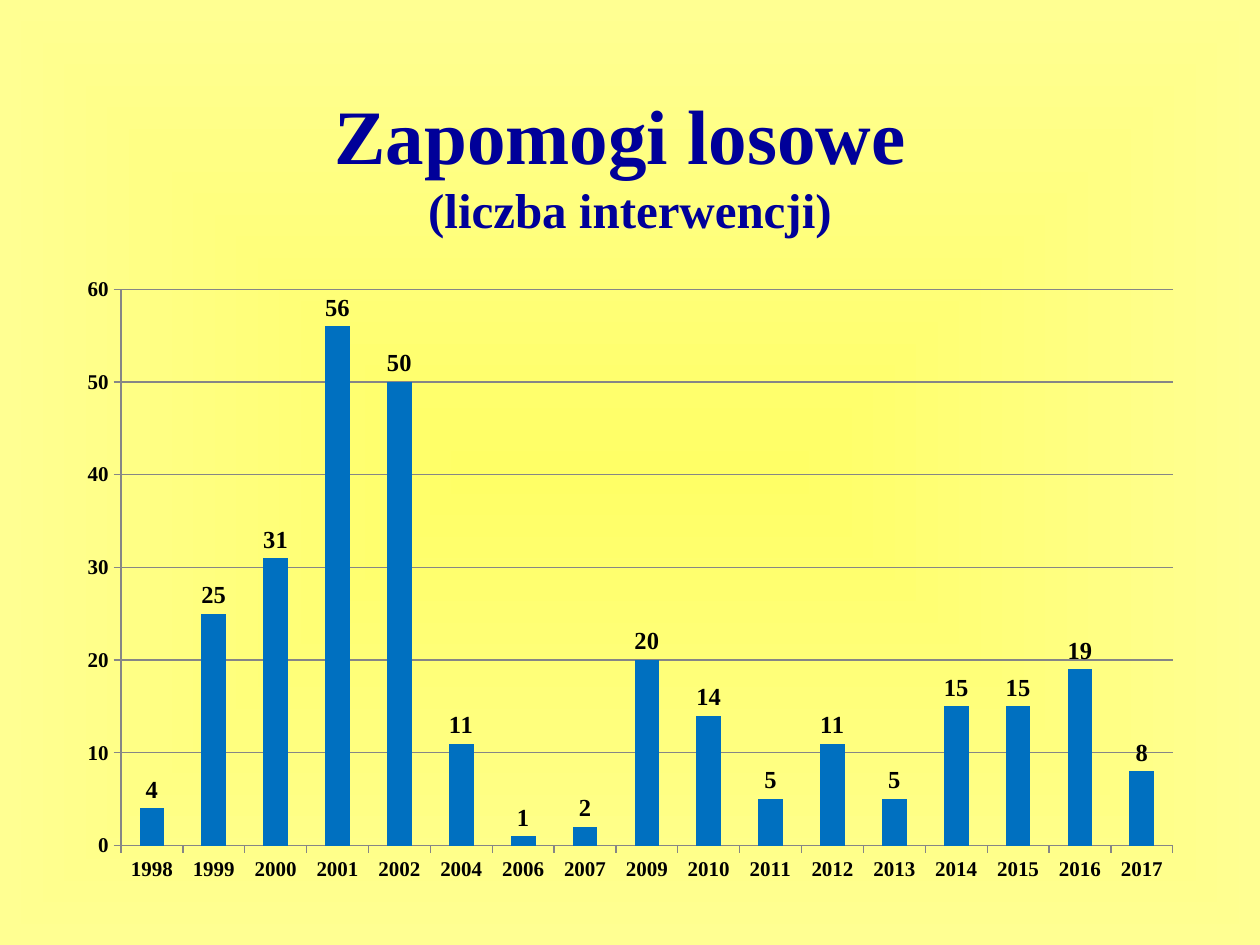
from dataclasses import dataclass

import pptx
import pptx.chart.data
import pptx.dml.color
import pptx.enum.chart
import pptx.enum.text
import pptx.oxml
import pptx.oxml.ns
import pptx.util
from pptx.util import Cm, Pt


def colour(code):
    return pptx.dml.color.RGBColor.from_string(code)


@dataclass(frozen=True)
class Theme:
    font: str = "Times New Roman"
    centre: str = "FFFF66"
    edge: str = "FFFF92"
    title: str = "000099"
    text: str = "000000"
    column: str = "0070C0"
    line: str = "868686"
    title_size: int = 44
    subtitle_size: int = 28
    label_size: int = 14
    axis_size: int = 12


@dataclass(frozen=True)
class Box:
    left: float
    top: float
    width: float
    height: float

    def lengths(self):
        return Cm(self.left), Cm(self.top), Cm(self.width), Cm(self.height)


THEME = Theme()
TITLE_BOX = Box(1.9, 1.7, 21.6, 3.18)
CHART_BOX = Box(1.3, 5.33, 22.8, 12.6)
PLOT_AREA = {"x": 0.05, "y": 0.04, "w": 0.93, "h": 0.89}

INTERVENTIONS = {
    "1998": 4, "1999": 25, "2000": 31, "2001": 56, "2002": 50, "2004": 11,
    "2006": 1, "2007": 2, "2009": 20, "2010": 14, "2011": 5, "2012": 11,
    "2013": 5, "2014": 15, "2015": 15, "2016": 19, "2017": 8,
}


def paint_background(page):
    """Fill the page with a gradient that spreads from its centre."""
    fill = page.background.fill
    fill.gradient()
    for stop, code in zip(fill.gradient_stops, (THEME.centre, THEME.edge)):
        stop.color.rgb = colour(code)
    gradient = page._element.find(".//" + pptx.oxml.ns.qn("a:gradFill"))
    gradient.remove(gradient.find(pptx.oxml.ns.qn("a:lin")))
    gradient.append(pptx.oxml.parse_xml(
        f'<a:path {pptx.oxml.ns.nsdecls("a")} path="shape">'
        '<a:fillToRect l="50000" t="50000" r="50000" b="50000"/></a:path>'))


def format_font(font, size, code):
    font.name = THEME.font
    font.size = Pt(size)
    font.bold = True
    font.color.rgb = colour(code)


def place_title(page, box, heading, subtitle):
    title = page.shapes.title
    title.left, title.top, title.width, title.height = box.lengths()
    frame = title.text_frame
    frame.auto_size = pptx.enum.text.MSO_AUTO_SIZE.NONE
    frame.vertical_anchor = pptx.enum.text.MSO_ANCHOR.MIDDLE
    para = frame.paragraphs[0]
    para.alignment = pptx.enum.text.PP_ALIGN.CENTER
    format_font(para.font, THEME.title_size, THEME.title)
    span = para.add_run()
    span.text = heading
    format_font(span.font, THEME.title_size, THEME.title)
    para.add_line_break()
    span = para.add_run()
    span.text = subtitle
    format_font(span.font, THEME.subtitle_size, THEME.title)


def fix_plot_area(chart):
    """Set the inner plot area as fractions of the chart's size."""
    area = chart._chartSpace.chart.plotArea
    for layout in area.findall(pptx.oxml.ns.qn("c:layout")):
        area.remove(layout)
    modes = '<c:xMode val="edge"/><c:yMode val="edge"/>'
    sizes = "".join(f'<c:{key} val="{part}"/>' for key, part in PLOT_AREA.items())
    area.insert(0, pptx.oxml.parse_xml(
        f'<c:layout {pptx.oxml.ns.nsdecls("c")}><c:manualLayout>'
        f'<c:layoutTarget val="inner"/>{modes}{sizes}'
        '</c:manualLayout></c:layout>'))


def format_line(line):
    line.color.rgb = colour(THEME.line)
    line.width = Pt(0.75)


def place_chart(page, box, counts):
    data = pptx.chart.data.CategoryChartData()
    data.categories = list(counts)
    data.add_series("Liczba interwencji", list(counts.values()))
    chart = page.shapes.add_chart(
        pptx.enum.chart.XL_CHART_TYPE.COLUMN_CLUSTERED, *box.lengths(), data).chart
    chart.has_legend = False
    chart.has_title = False
    format_font(chart.font, THEME.axis_size, THEME.text)
    fix_plot_area(chart)

    for axis in (chart.category_axis, chart.value_axis):
        axis.major_tick_mark = pptx.enum.chart.XL_TICK_MARK.OUTSIDE
        format_font(axis.tick_labels.font, THEME.axis_size, THEME.text)
        format_line(axis.format.line)
    axis = chart.value_axis
    axis.minimum_scale, axis.maximum_scale, axis.major_unit = 0, 60, 10
    axis.has_major_gridlines = True
    format_line(axis.major_gridlines.format.line)

    plot = chart.plots[0]
    plot.gap_width = 150
    plot.vary_by_categories = False
    fill = plot.series[0].format.fill
    fill.solid()
    fill.fore_color.rgb = colour(THEME.column)
    plot.has_data_labels = True
    labels = plot.data_labels
    labels.show_value = True
    labels.position = pptx.enum.chart.XL_LABEL_POSITION.OUTSIDE_END
    format_font(labels.font, THEME.label_size, THEME.text)


def main():
    deck = pptx.Presentation()
    deck.slide_width, deck.slide_height = Cm(25.4), Cm(19.05)
    page = deck.slides.add_slide(deck.slide_layouts.get_by_name("Title Only"))
    paint_background(page)
    place_title(page, TITLE_BOX, "Zapomogi losowe ", "(liczba interwencji)")
    place_chart(page, CHART_BOX, INTERVENTIONS)
    deck.save("out.pptx")


if __name__ == "__main__":
    main()
